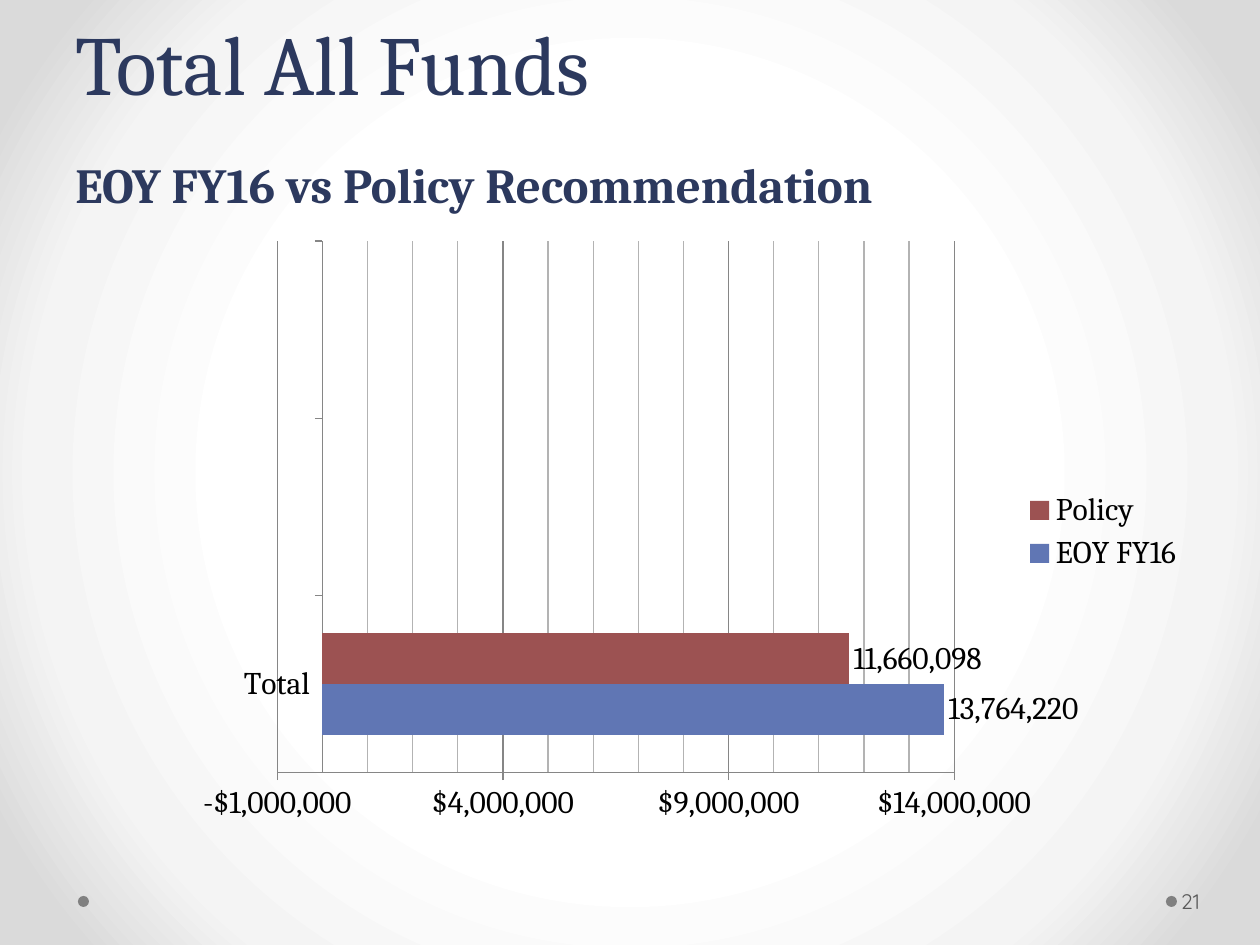
from dataclasses import dataclass

from lxml.etree import SubElement
from pptx import Presentation
from pptx.chart.data import CategoryChartData as ChartData
from pptx.dml.color import RGBColor as Rgb
from pptx.enum.chart import XL_CHART_TYPE as Kind
from pptx.enum.chart import XL_LABEL_POSITION as LabelPos
from pptx.enum.chart import XL_LEGEND_POSITION as LegendPos
from pptx.enum.chart import XL_TICK_MARK as Tick
from pptx.enum.shapes import MSO_SHAPE as Preset
from pptx.enum.text import MSO_ANCHOR as Anchor
from pptx.oxml import parse_xml
from pptx.oxml.ns import nsdecls, qn
from pptx.util import Emu, Pt

SCALE = 914400 / 126
SERIF, SANS = "Cambria", "Quicksand"
COLORS = {
    "title": "2C395E",
    "text": "000000",
    "number": "595959",
    "dot": "808080",
    "major": "868686",
    "minor": "B3B3B3",
    "blue": "6076B4",
    "red": "9C5252",
}
GLOW = [(50, "FFFFFF"), (76, "F4F4F4"), (92, "DADADA")]
PLOT = {"x": 0.189, "y": 0.034, "w": 0.597, "h": 0.852}


@dataclass
class Box:
    x: int
    y: int
    w: int
    h: int

    def emu(self) -> list[Emu]:
        return [px(n) for n in (self.x, self.y, self.w, self.h)]


@dataclass
class Style:
    size: int
    color: str
    face: str = SERIF
    bold: bool = False


@dataclass
class Fund:
    name: str
    total: int
    color: str


DOTS = [Box(1166, 896, 11, 11), Box(78, 896, 11, 11)]
FUNDS = [Fund("EOY FY16", 13764220, "blue"), Fund("Policy ", 11660098, "red")]


def px(n: int) -> Emu:
    return Emu(round(n * SCALE))


def rgb(name: str) -> Rgb:
    return Rgb.from_string(COLORS[name])


def set_font(font, style: Style) -> None:
    font.size = Pt(style.size)
    font.name = style.face
    font.bold = style.bold
    font.color.rgb = rgb(style.color)


def set_line(part, color: str) -> None:
    part.format.line.color.rgb = rgb(color)
    part.format.line.width = Pt(0.75)


def add_glow(slide) -> None:
    """Fill the background with a radial gradient."""
    stops = "".join(
        f'<a:gs pos="{pos * 1000}"><a:srgbClr val="{color}"/></a:gs>'
        for pos, color in GLOW
    )
    back = parse_xml(
        f'<p:bg {nsdecls("p", "a")}><p:bgPr><a:gradFill><a:gsLst>{stops}</a:gsLst>'
        '<a:path path="circle"><a:fillToRect l="50000" t="50000" r="50000" b="50000"/>'
        "</a:path></a:gradFill><a:effectLst/></p:bgPr></p:bg>"
    )
    slide.element.cSld.insert(0, back)


def add_dot(slide, box: Box) -> None:
    dot = slide.shapes.add_shape(Preset.OVAL, *box.emu())
    dot.shadow.inherit = False
    dot.fill.solid()
    dot.fill.fore_color.rgb = rgb("dot")
    dot.line.fill.background()


def add_text(slide, box: Box, text: str, anchor: Anchor, styles: list[Style]):
    """Add a text box with one style for each line."""
    frame = slide.shapes.add_textbox(*box.emu()).text_frame
    frame.word_wrap = True
    frame.vertical_anchor = anchor
    para = frame.paragraphs[0]
    para.text = text
    for run, style in zip(para.runs, styles):
        set_font(run.font, style)
    return frame


def place_plot(chart) -> None:
    """Fix the inner plot area as shares of the chart."""
    area = chart.element.find(".//" + qn("c:plotArea"))
    for old in area.findall(qn("c:layout")):
        area.remove(old)
    layout = parse_xml(f'<c:layout {nsdecls("c")}/>')
    manual = SubElement(layout, qn("c:manualLayout"))
    rules = {"layoutTarget": "inner", "xMode": "edge", "yMode": "edge", **PLOT}
    for tag, val in rules.items():
        SubElement(manual, qn(f"c:{tag}")).set("val", str(val))
    area.insert(0, layout)


def tint_minor(chart) -> None:
    """Colour the minor gridlines."""
    grid = chart.element.find(".//" + qn("c:minorGridlines"))
    grid.append(parse_xml(
        f'<c:spPr {nsdecls("c", "a")}><a:ln w="{Pt(0.75)}"><a:solidFill>'
        f'<a:srgbClr val="{COLORS["minor"]}"/></a:solidFill></a:ln></c:spPr>'
    ))


def set_axes(chart) -> None:
    cat, val = chart.category_axis, chart.value_axis
    for axis in (cat, val):
        axis.major_tick_mark = Tick.OUTSIDE
        axis.minor_tick_mark = Tick.NONE
        set_line(axis, "major")
    cat.has_major_gridlines = False
    val.minimum_scale, val.maximum_scale = -1_000_000, 14_000_000
    val.major_unit, val.minor_unit = 5_000_000, 1_000_000
    val.has_major_gridlines = val.has_minor_gridlines = True
    set_line(val.major_gridlines, "major")
    tint_minor(chart)
    val.tick_labels.number_format = '"$"#,##0'
    val.tick_labels.number_format_is_linked = False


def add_bars(slide, box: Box, funds: list[Fund]) -> None:
    data = ChartData()
    data.categories = ["Total", "", ""]
    for fund in funds:
        data.add_series(fund.name, [fund.total, None, None])
    chart = slide.shapes.add_chart(Kind.BAR_CLUSTERED, *box.emu(), data).chart
    chart.has_title = False
    set_font(chart.font, Style(18, "text"))
    chart.has_legend = True
    chart.legend.position = LegendPos.RIGHT
    chart.legend.include_in_layout = False
    plot = chart.plots[0]
    plot.gap_width, plot.overlap = 150, 0
    plot.vary_by_categories = False
    for bar, fund in zip(plot.series, funds):
        bar.invert_if_negative = False
        bar.format.fill.solid()
        bar.format.fill.fore_color.rgb = rgb(fund.color)
        labels = bar.data_labels
        labels.show_value = True
        labels.position = LabelPos.OUTSIDE_END
        labels.number_format = "#,##0"
        labels.number_format_is_linked = False
    set_axes(chart)
    place_plot(chart)


def main() -> None:
    deck = Presentation()
    deck.slide_width, deck.slide_height = px(1260), px(945)
    slide = deck.slides.add_slide(deck.slide_layouts[6])
    add_glow(slide)
    for box in DOTS:
        add_dot(slide, box)
    title = add_text(
        slide, Box(63, 0, 1134, 220),
        "Total All Funds\vEOY FY16 vs Policy Recommendation", Anchor.BOTTOM,
        [Style(48, "title"), Style(28, "title", bold=True)],
    )
    title.paragraphs[0].line_spacing = Pt(58)
    add_bars(slide, Box(63, 220, 1134, 624), FUNDS)
    number = add_text(
        slide, Box(1177, 876, 77, 50), "21", Anchor.MIDDLE,
        [Style(12, "number", SANS)],
    )
    number.margin_left, number.margin_right = px(4), px(6)
    deck.save("out.pptx")


if __name__ == "__main__":
    main()
